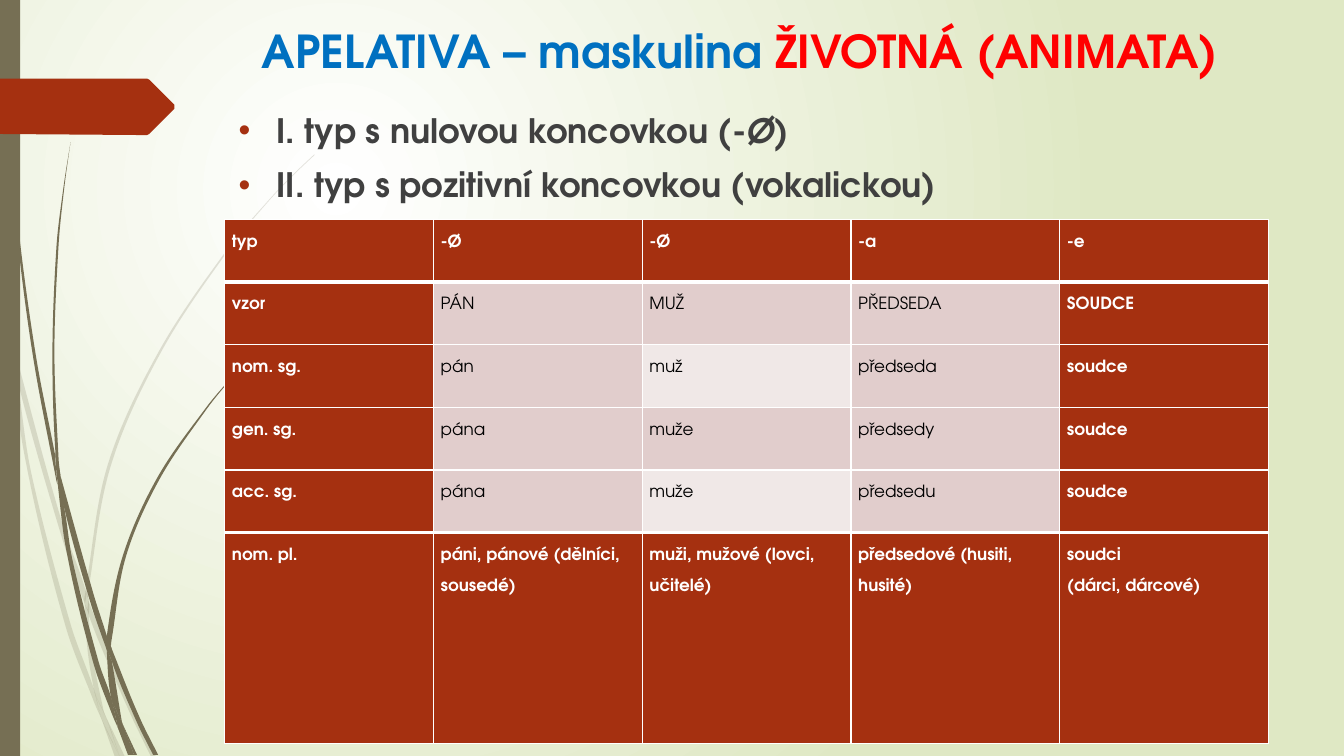
import math
from dataclasses import dataclass

import pptx
import pptx.dml.color
import pptx.enum.shapes
import pptx.enum.text
import pptx.oxml
import pptx.oxml.ns
import pptx.util

Pt = pptx.util.Pt
RGB = pptx.dml.color.RGBColor.from_string
NS = pptx.oxml.ns.nsdecls("a")
qn = pptx.oxml.ns.qn
GRID = 0.72


@dataclass(frozen=True)
class Theme:
    """Colours, font and type sizes of the slide."""
    font: str = "TeX Gyre Adventor"
    white: str = "FFFFFF"
    black: str = "000000"
    meadow: str = "DFE8C4"
    stem: str = "766F54"
    rust: str = "A53010"
    pale: str = "E1CDCC"
    paler: str = "F0E8E7"
    blue: str = "0070C0"
    red: str = "FF0000"
    ink: str = "404040"
    title_size: float = 32.4
    list_size: float = 24
    table_size: float = 12


THEME = Theme()

FAINT_GRASS = [
    [(11, 350), (9, 322), (0, 282), (0, 299), (10, 344)],
    [(58, 522), (84, 599), (85, 586), (62, 520), (14, 345), (17, 376)],
    [(92, 607), (88, 596), (88, 610), (123, 694), (150, 751), (155, 751), (127, 692)],
    [(119, 751), (124, 751), (105, 711)],
    [(93, 683), (70, 619), (31, 469), (17, 376), (11, 350), (28, 470), (65, 621),
     (92, 693), (101, 714), (99, 707)],
    [(84, 599), (87, 646), (93, 683), (96, 692), (105, 711), (103, 706), (91, 646),
     (88, 610), (88, 608)],
    [(88, 584), (110, 462), (160, 349), (229, 245), (268, 198), (290, 175), (312, 154),
     (312, 153), (289, 175), (268, 197), (228, 244), (158, 348), (107, 461), (85, 584),
     (85, 586), (88, 596)],
    [(101, 714), (114, 751), (119, 751)],
    [(88, 608), (88, 610), (88, 596), (85, 586), (84, 599)],
    [(96, 692), (93, 683), (99, 707), (101, 714), (119, 751), (105, 711)],
]
DARK_GRASS = [
    [(7, 110), (17, 233), (33, 355), (56, 477), (57, 481), (55, 457), (55, 453), (36, 355),
     (19, 232), (8, 109), (5, 48), (4, 0), (3, 0), (4, 48)],
    [(88, 592), (106, 645), (106, 633), (106, 631), (93, 590), (60, 472), (64, 505)],
    [(113, 649), (110, 641), (111, 656), (132, 708), (152, 749), (157, 749), (136, 706)],
    [(110, 691), (98, 657), (72, 556), (64, 505), (57, 477), (68, 557), (93, 659),
     (111, 708), (117, 722), (116, 717)],
    [(60, 472), (58, 453), (54, 349), (58, 245), (63, 193), (70, 141), (62, 193),
     (56, 245), (52, 349), (55, 449)],
    [(133, 749), (136, 749), (122, 719)],
    [(57, 477), (64, 505), (60, 472), (55, 449), (55, 453)],
    [(111, 633), (125, 552), (158, 476), (205, 406), (231, 374), (245, 359), (261, 344),
     (260, 344), (245, 358), (231, 373), (204, 405), (156, 474), (122, 551), (106, 631),
     (110, 641)],
    [(117, 722), (127, 749), (131, 749)],
    [(106, 645), (110, 691), (116, 706), (122, 719), (121, 716), (111, 656), (109, 651)],
    [(106, 645), (109, 651), (111, 656), (110, 641), (106, 631), (106, 633)],
    [(116, 706), (110, 691), (116, 717), (117, 722), (130, 749), (133, 749), (122, 719)],
]
POINTER = [(173, 108), (148, 133), (146, 134), (136, 134), (0, 133), (0, 78), (136, 78),
           (146, 78), (148, 79), (173, 104)]
TITLE = [("APELATIVA – maskulina ", THEME.blue), ("ŽIVOTNÁ (ANIMATA)", THEME.red)]
TYPES = [
    [("I. typ s nulovou koncovkou (-", False), ("Ø", True), (")", False)],
    [("II. typ s pozitivní koncovkou (vokalickou)", False)],
]
DECLENSION = [
    ["typ", "-Ø", "-Ø", "-a", "-e"],
    ["vzor", "PÁN", "MUŽ", "PŘEDSEDA", "SOUDCE"],
    ["nom. sg.", "pán", "muž", "předseda", "soudce"],
    ["gen. sg.", "pána", "muže", "předsedy", "soudce"],
    ["acc. sg.", "pána", "muže", "předsedu", "soudce"],
    ["nom. pl.", "páni, pánové (dělníci, sousedé)", "muži, mužové (lovci, učitelé)",
     "předsedové (husiti, husité)", "soudci\n(dárci, dárcové)"],
]
ROW_HEIGHTS = [44.8] * 5 + [150.4]


def set_values(target, values):
    """Set every named value on the target."""
    for name, value in values.items():
        setattr(target, name, value)


def write_run(line, words, size, colour, **values):
    """Add a run in the theme typeface with its size, colour and further values."""
    run = line.add_run()
    run.text = words
    set_values(run.font, {"name": THEME.font, "size": Pt(size), **values})
    run.font.color.rgb = RGB(colour)


def paint(shape, colour, opacity=100):
    """Fill a shape with one colour, without line or shadow."""
    shape.shadow.inherit = False
    shape.line.fill.background()
    shape.fill.solid()
    shape.fill.fore_color.rgb = RGB(colour)
    if opacity < 100:
        tint = shape.fill._xPr.find(".//" + qn("a:srgbClr"))
        tint.append(pptx.oxml.parse_xml(f'<a:alpha {NS} val="{opacity * 1000}"/>'))


def paint_background(slide):
    """Lay a round gradient over the background, brightest at the upper left."""
    fill = slide.background.fill
    fill.gradient()
    for stop, colour in zip(fill.gradient_stops, (THEME.white, THEME.meadow)):
        stop.color.rgb = RGB(colour)
    direction = fill._xPr.find(".//" + qn("a:lin"))
    direction.getparent().replace(direction, pptx.oxml.parse_xml(
        f'<a:path {NS} path="circle">'
        '<a:fillToRect l="50000" t="50000" r="100000" b="100000"/></a:path>'))


def find_handle(before, knot, after, end):
    """Return the curve handle at a knot towards end, or None at a sharp corner."""
    turn = (math.atan2(after[1] - knot[1], after[0] - knot[0])
            - math.atan2(knot[1] - before[1], knot[0] - before[0]))
    if math.cos(turn) < 0.8:
        return None
    reach = math.dist(knot, end) / 3 / math.dist(before, after)
    sign = 1 if end == after else -1
    return tuple(k + sign * reach * (a - b) for k, a, b in zip(knot, after, before))


def add_outline(slide, knots, colour, opacity=100, curved=True):
    """Draw a closed outline through grid knots, smooth except at sharp corners."""
    points, count = [], len(knots)
    for i in range(count):
        before, start, end, after = (knots[(i + k) % count] for k in (-1, 0, 1, 2))
        if curved:
            first = find_handle(before, start, end, end)
            second = find_handle(start, end, after, start)
            points += [first or second or start, second or first or end]
        points.append(end)
    pen = [(Pt(x * GRID), Pt(y * GRID)) for x, y in points]
    builder = slide.shapes.build_freeform(*pen[-1], scale=1.0)
    builder.add_line_segments(pen, close=True)
    shape = builder.convert_to_shape()
    paint(shape, colour, opacity)
    lines = list(shape._element.iter(qn("a:lnTo"))) if curved else []
    for i in range(0, len(lines), 3):
        curve = pptx.oxml.parse_xml(f"<a:cubicBezTo {NS}/>")
        lines[i].addprevious(curve)
        for line in lines[i:i + 3]:
            curve.append(line[0])
            line.getparent().remove(line)


def place_text(placeholder, left, top, width, height):
    """Move a placeholder to the front and to its place, and return its text frame."""
    placeholder._element.getparent().append(placeholder._element)
    set_values(placeholder, {"left": Pt(left), "top": Pt(top),
                             "width": Pt(width), "height": Pt(height)})
    set_values(placeholder.text_frame, {
        "word_wrap": True, "auto_size": pptx.enum.text.MSO_AUTO_SIZE.NONE,
        "vertical_anchor": pptx.enum.text.MSO_ANCHOR.TOP})
    return placeholder.text_frame


def write_title(placeholder):
    """Write the two-coloured title."""
    line = place_text(placeholder, 179.6, 13, 702, 40).paragraphs[0]
    line.alignment = pptx.enum.text.PP_ALIGN.LEFT
    for words, colour in TITLE:
        write_run(line, words, THEME.title_size, colour, bold=True)


def write_types(placeholder):
    """Write the bulleted list of types."""
    frame = place_text(placeholder, 163.3, 75, 718.5, 440.5)
    for i, parts in enumerate(TYPES):
        line = frame.add_paragraph() if i else frame.paragraphs[0]
        line.space_before = Pt(10)
        layout = line._p.get_or_add_pPr()
        layout.set("marL", str(Pt(27)))
        layout.set("indent", str(-Pt(27)))
        for bullet in (f'<a:buClr {NS}><a:srgbClr val="{THEME.rust}"/></a:buClr>',
                       f'<a:buFont {NS} typeface="Arial"/>', f'<a:buChar {NS} char="•"/>'):
            layout.append(pptx.oxml.parse_xml(bullet))
        for words, italic in parts:
            write_run(line, words, THEME.list_size, THEME.ink, bold=True, italic=italic)


def format_cell(cell, words, fill, strong, borders):
    """Write and colour one table cell with white borders."""
    set_values(cell, {"margin_left": Pt(5.2), "margin_right": Pt(5.2),
                      "margin_top": 0, "margin_bottom": 0})
    for i, text in enumerate(words.split("\n")):
        line = cell.text_frame.add_paragraph() if i else cell.text_frame.paragraphs[0]
        line.line_spacing = 2.0
        write_run(line, text, THEME.table_size, THEME.white if strong else THEME.black,
                  bold=strong)
    for side, width in borders.items():
        cell._tc.get_or_add_tcPr().append(pptx.oxml.parse_xml(
            f'<a:ln{side} {NS} w="{Pt(width)}"><a:solidFill>'
            f'<a:srgbClr val="{THEME.white}"/></a:solidFill></a:ln{side}>'))
    cell.fill.solid()
    cell.fill.fore_color.rgb = RGB(fill)


def add_declension(slide):
    """Add the declension table, strong along its outer rows and columns."""
    rows, columns = len(DECLENSION), len(DECLENSION[0])
    table = slide.shapes.add_table(rows, columns, Pt(160.5), Pt(156.5),
                                   Pt(745.6), Pt(sum(ROW_HEIGHTS))).table
    set_values(table, {"first_row": False, "horz_banding": False})
    edges = {0: {"L": 1, "R": 1, "T": 1, "B": 3}, rows - 1: {"L": 1, "R": 1, "T": 3, "B": 1}}
    for r, forms in enumerate(DECLENSION):
        table.rows[r].height = Pt(ROW_HEIGHTS[r])
        for c, words in enumerate(forms):
            strong = r in edges or c in (0, columns - 1)
            soft = THEME.paler if c == 2 and r % 2 == 0 else THEME.pale
            format_cell(table.cell(r, c), words, THEME.rust if strong else soft,
                        strong, edges.get(r, {}))


def main():
    """Build the slide and save it."""
    deck = pptx.Presentation()
    set_values(deck, {"slide_width": Pt(960), "slide_height": Pt(540)})
    slide = deck.slides.add_slide(deck.slide_layouts[1])
    paint_background(slide)
    for grass, opacity in ((FAINT_GRASS, 20), (DARK_GRASS, 100)):
        for knots in grass:
            add_outline(slide, knots, THEME.stem, opacity)
    edge = slide.shapes.add_shape(pptx.enum.shapes.MSO_SHAPE.RECTANGLE,
                                  0, 0, Pt(14.4), Pt(540))
    paint(edge, THEME.stem)
    add_outline(slide, POINTER, THEME.rust, curved=False)
    write_title(slide.shapes.title)
    write_types(slide.placeholders[1])
    add_declension(slide)
    deck.save("out.pptx")


if __name__ == "__main__":
    main()
